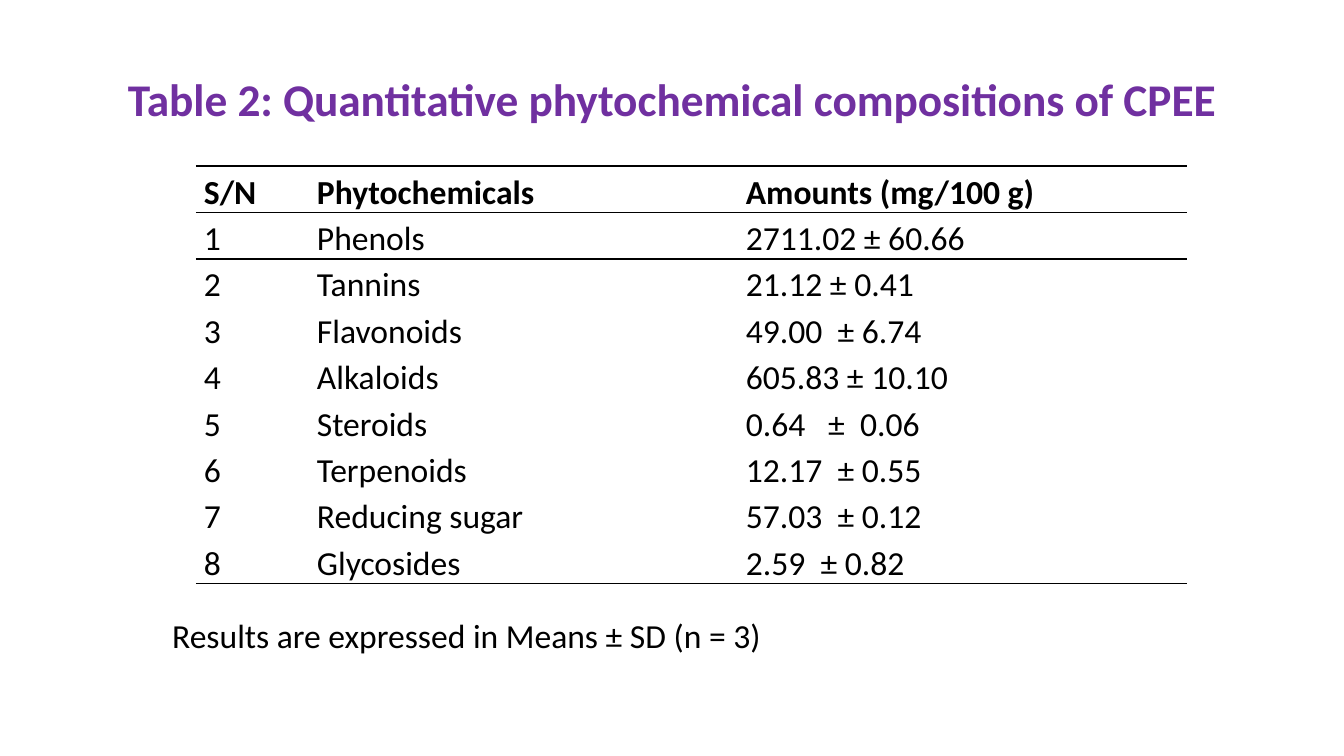
from lxml.etree import SubElement
from pptx import Presentation
from pptx.dml.color import RGBColor
from pptx.enum.text import MSO_ANCHOR, PP_ALIGN
from pptx.oxml.ns import qn
from pptx.util import Pt

SCALE = 914400 / 134.4
BLACK = RGBColor(0x00, 0x00, 0x00)
PURPLE = RGBColor(0x70, 0x30, 0xA0)
FONT = "Calibri"
COLS = [113, 429, 449]
RULES = {0, 1, 2, 9}
ROWS = [
    ("S/N", "Phytochemicals", "Amounts (mg/100 g)"),
    ("1", "Phenols", "2711.02 ± 60.66"),
    ("2", "Tannins", "21.12 ± 0.41"),
    ("3", "Flavonoids", "49.00  ± 6.74"),
    ("4", "Alkaloids", "605.83 ± 10.10"),
    ("5", "Steroids", "0.64   ±  0.06"),
    ("6", "Terpenoids", "12.17  ± 0.55"),
    ("7", "Reducing sugar", "57.03  ± 0.12"),
    ("8", "Glycosides", "2.59  ± 0.82"),
    ("", "", ""),
]


def px(n):
    """Turn px into EMU."""
    return round(n * SCALE)


def add_run(para, text, size, color=BLACK, bold=False):
    """Add one styled run to a paragraph."""
    run = para.add_run()
    run.text = text
    font = run.font
    font.name, font.size, font.bold = FONT, Pt(size), bold
    font.color.rgb = color


def add_label(slide, box, text, size, align, color=BLACK, bold=False):
    """Place a line of text, centred vertically in its box."""
    frame = slide.shapes.add_textbox(*map(px, box)).text_frame
    frame.word_wrap = True
    frame.vertical_anchor = MSO_ANCHOR.MIDDLE
    para = frame.paragraphs[0]
    para.alignment = align
    add_run(para, text, size, color, bold)


def set_edge(cell, side, ruled):
    """Draw or clear one border of a cell."""
    props = cell._tc.get_or_add_tcPr()
    line = SubElement(props, qn(f"a:ln{side}"), w=str(Pt(1)))
    if ruled:
        fill = SubElement(line, qn("a:solidFill"))
        SubElement(fill, qn("a:srgbClr"), val=str(BLACK))
    else:
        SubElement(line, qn("a:noFill"))


def fill_cell(cell, text, row):
    """Style one cell and write its text."""
    cell.margin_left = cell.margin_right = px(8)
    cell.margin_top = cell.margin_bottom = 0
    for side, ruled in (("L", False), ("R", False),
                        ("T", row in RULES), ("B", row + 1 in RULES)):
        set_edge(cell, side, ruled)
    cell.fill.background()
    if text:
        para = cell.text_frame.paragraphs[0]
        para.alignment = PP_ALIGN.JUSTIFY
        para.line_spacing = 1.15
        add_run(para, text, 18, bold=row == 0)


def add_grid(slide, box):
    """Place the table of amounts in its box."""
    frame = slide.shapes.add_table(len(ROWS), len(COLS), *map(px, box))
    table = frame.table
    table.first_row = table.horz_banding = False
    for col, width in zip(table.columns, COLS):
        col.width = px(width)
    for row, texts in enumerate(ROWS):
        table.rows[row].height = px(43 if any(texts) else 23)
        for col, text in enumerate(texts):
            fill_cell(table.cell(row, col), text, row)


def main():
    """Build and save the slide."""
    deck = Presentation()
    deck.slide_width, deck.slide_height = px(1344), px(756)
    slide = deck.slides.add_slide(deck.slide_layouts[6])
    add_label(slide, (93, 40, 1158, 116),
              "Table 2: Quantitative phytochemical compositions of CPEE",
              24.3, PP_ALIGN.CENTER, PURPLE, True)
    add_label(slide, (159, 567, 894, 136),
              "Results are expressed in Means ± SD (n = 3)", 18, PP_ALIGN.LEFT)
    add_grid(slide, (196, 166, sum(COLS), 416))
    deck.save("out.pptx")


if __name__ == "__main__":
    main()
